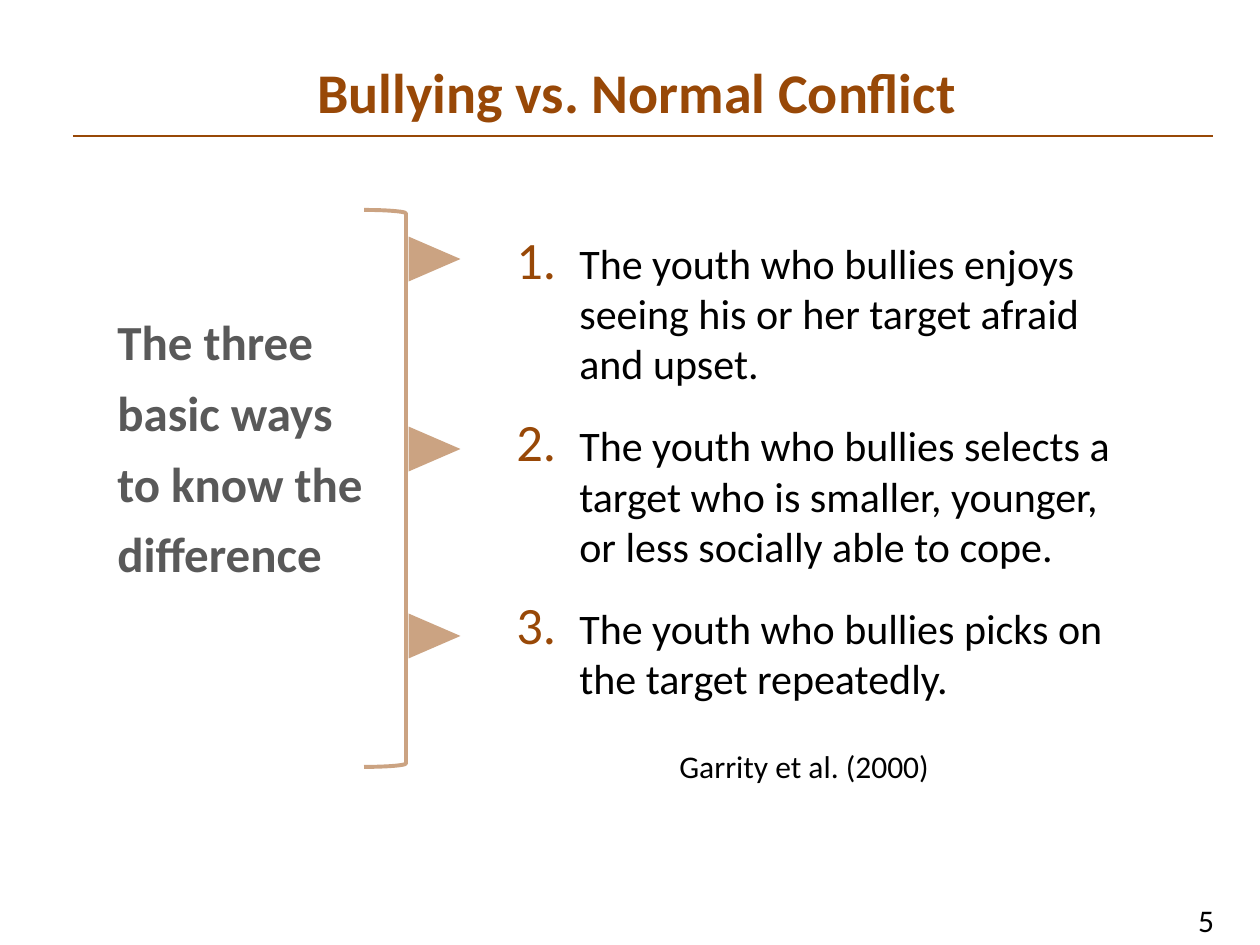
from dataclasses import dataclass

from lxml.etree import SubElement
from pptx import Presentation
from pptx.dml.color import RGBColor
from pptx.enum.shapes import MSO_CONNECTOR as Connector, MSO_SHAPE as Shape
from pptx.enum.text import MSO_ANCHOR as Anchor, PP_ALIGN as Align
from pptx.oxml.ns import qn
from pptx.util import Emu, Pt


@dataclass(frozen=True)
class Theme:
    """Colours, font and type sizes of the slide."""
    accent: str = "984807"
    lead: str = "595959"
    ink: str = "000000"
    font: str = "Calibri"
    title_size: int = 32
    lead_size: int = 28
    list_size: int = 24
    note_size: int = 18
    half_opacity: int = 50000


THEME = Theme()
POINTS = [
    "The youth who bullies enjoys seeing his or her target afraid and upset.",
    "The youth who bullies selects a target who is smaller, younger, or less socially able to cope.",
    "The youth who bullies picks on the target repeatedly.",
]
POINTER_TOPS = [233, 423, 610]


def px(value):
    """Convert pixels at 126 to the inch into EMU."""
    return Emu(round(value * 914400 / 126))


def rgb(colour):
    """Return a colour object for a hex string."""
    return RGBColor.from_string(colour)


def number_paragraph(paragraph):
    """Give a paragraph a hanging, enlarged, accent-coloured number."""
    properties = paragraph._p.get_or_add_pPr()
    properties.set("marL", str(px(95)))
    properties.set("indent", str(-px(63)))
    colour = SubElement(properties, qn("a:buClr"))
    SubElement(colour, qn("a:srgbClr"), val=THEME.accent)
    SubElement(properties, qn("a:buSzPct"), val="125000")
    SubElement(properties, qn("a:buFont"), typeface="+mj-lt")
    SubElement(properties, qn("a:buAutoNum"), type="arabicPeriod")


def add_text(slide, box, *texts, size, colour=THEME.ink, bold=False, align=Align.LEFT,
             anchor=Anchor.TOP, spacing=None, after=None, numbered=False, wrap=True):
    """Add a text box with one paragraph for each text."""
    frame = slide.shapes.add_textbox(*map(px, box)).text_frame
    frame.word_wrap = wrap
    frame.vertical_anchor = anchor
    for index, text in enumerate(texts):
        paragraph = frame.add_paragraph() if index else frame.paragraphs[0]
        paragraph.text = text
        paragraph.alignment = align
        if spacing:
            paragraph.line_spacing = spacing
        if after:
            paragraph.space_after = Pt(after)
        if numbered:
            number_paragraph(paragraph)
        for run in paragraph.runs:
            run.font.name = THEME.font
            run.font.size = Pt(size)
            run.font.bold = bold
            run.font.color.rgb = rgb(colour)


def paint_half(fill):
    """Paint a fill with the accent colour at half opacity."""
    fill.solid()
    fill.fore_color.rgb = rgb(THEME.accent)
    colour = fill._xPr.find(f"{qn('a:solidFill')}/{qn('a:srgbClr')}")
    SubElement(colour, qn("a:alpha"), val=str(THEME.half_opacity))


def add_pointer(slide, top):
    """Add a triangle that points right from the bracket."""
    shape = slide.shapes.add_shape(Shape.ISOSCELES_TRIANGLE, *map(px, (412, top, 45, 52)))
    shape.rotation = 90
    shape.shadow.inherit = False
    paint_half(shape.fill)
    shape.line.fill.background()


def add_bracket(slide, box):
    """Add the bracket between the lead text and the list."""
    shape = slide.shapes.add_shape(Shape.RIGHT_BRACKET, *map(px, box))
    shape.shadow.inherit = False
    shape.fill.background()
    shape.line.width = Pt(2.25)
    paint_half(shape.line.fill)


def add_rule(slide, left, right, y):
    """Add a horizontal accent line."""
    line = slide.shapes.add_connector(Connector.STRAIGHT, *map(px, (left, y, right, y)))
    line.line.color.rgb = rgb(THEME.accent)
    line.line.width = Pt(1.5)
    SubElement(line._element.spPr, qn("a:effectLst"))


def main():
    """Build and save the slide."""
    presentation = Presentation()
    presentation.slide_width, presentation.slide_height = px(1260), px(945)
    slide = presentation.slides.add_slide(presentation.slide_layouts[6])

    for top in POINTER_TOPS:
        add_pointer(slide, top)
    add_rule(slide, 73, 1213, 136)
    add_text(slide, (472, 231, 683, 515), *POINTS, size=THEME.list_size, after=18, numbered=True)
    add_text(slide, (70, 13, 1134, 157), "Bullying vs. Normal Conflict", size=THEME.title_size,
             colour=THEME.accent, bold=True, align=Align.CENTER, anchor=Anchor.MIDDLE)
    add_text(slide, (105, 294, 301, 357), "The three basic ways\vto know the difference",
             size=THEME.lead_size, colour=THEME.lead, bold=True, spacing=1.2)
    add_bracket(slide, (364, 210, 42, 557))
    add_text(slide, (667, 741, 277, 50), "Garrity et al. (2000)", size=THEME.note_size, wrap=False)
    add_text(slide, (1152, 895, 108, 50), "5", size=THEME.note_size, align=Align.CENTER)

    presentation.save("out.pptx")


if __name__ == "__main__":
    main()
